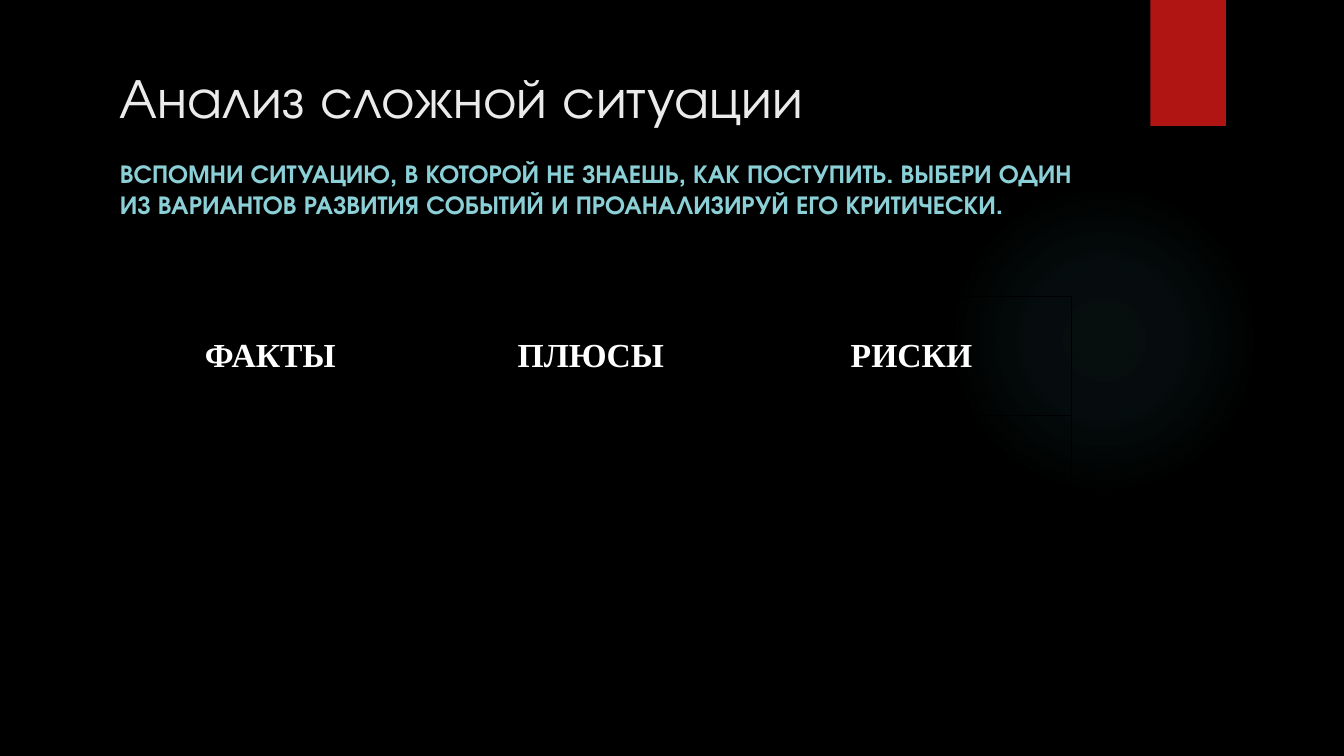
from lxml import etree
from pptx import Presentation
from pptx.dml.color import RGBColor
from pptx.enum.shapes import MSO_SHAPE
from pptx.enum.text import MSO_ANCHOR, PP_ALIGN
from pptx.oxml import parse_xml
from pptx.oxml.ns import nsdecls, qn
from pptx.util import Inches, Pt

RECT, OVAL = MSO_SHAPE.RECTANGLE, MSO_SHAPE.OVAL
TOP, MIDDLE, BOTTOM = MSO_ANCHOR.TOP, MSO_ANCHOR.MIDDLE, MSO_ANCHOR.BOTTOM
LEFT, CENTER = PP_ALIGN.LEFT, PP_ALIGN.CENTER


def rgb(value):
    return RGBColor.from_string(value)


class SlideBuilder:
    SANS = "TeX Gyre Adventor"
    SERIF = "Times New Roman"
    BLACK, WHITE = "000000", "FFFFFF"
    RED, TEAL = "B01513", "50B9C1"
    TITLE, LEAD = "EBEBEB", "8AD0D6"

    def __init__(self, prs):
        self.slide = prs.slides.add_slide(prs.slide_layouts[6])
        fill = self.slide.background.fill
        fill.solid()
        fill.fore_color.rgb = rgb(self.BLACK)

    def shape(self, kind, box, color):
        sp = self.slide.shapes.add_shape(kind, *map(Inches, box))
        sp.shadow.inherit = False
        sp.fill.solid()
        sp.fill.fore_color.rgb = rgb(color)
        sp.line.fill.background()
        return sp

    def glow(self, box, color, stops):
        sp = self.shape(OVAL, box, color)
        grad = parse_xml(
            f'<a:gradFill {nsdecls("a")} rotWithShape="1"><a:gsLst/>'
            '<a:path path="circle"><a:fillToRect l="50000" t="50000" '
            'r="50000" b="50000"/></a:path></a:gradFill>')
        for position, opacity in stops:
            gs = etree.SubElement(grad[0], qn("a:gs"), pos=str(position * 1000))
            clr = etree.SubElement(gs, qn("a:srgbClr"), val=color)
            etree.SubElement(clr, qn("a:alpha"), val=str(opacity * 1000))
        sp_pr = sp.element.spPr
        sp_pr.replace(sp_pr.find(qn("a:solidFill")), grad)

    def run(self, tf, text, size, font, color, bold=False, align=LEFT):
        p = tf.paragraphs[0]
        p.alignment = align
        r = p.add_run()
        r.text = text
        r.font.size = Pt(size)
        r.font.name = font
        r.font.bold = bold
        r.font.color.rgb = rgb(color)

    def text(self, box, text, size, color, bold=False, anchor=TOP):
        tf = self.slide.shapes.add_textbox(*map(Inches, box)).text_frame
        tf.word_wrap = True
        tf.vertical_anchor = anchor
        self.run(tf, text, size, self.SANS, color, bold)

    def border(self, cell, color, width):
        tc_pr = cell._tc.get_or_add_tcPr()
        for i, side in enumerate(("lnL", "lnR", "lnT", "lnB")):
            tc_pr.insert(i, parse_xml(
                f'<a:{side} {nsdecls("a")} w="{Pt(width)}"><a:solidFill>'
                f'<a:srgbClr val="{color}"/></a:solidFill></a:{side}>'))

    def table(self, box, headers, heights):
        table = self.slide.shapes.add_table(
            len(heights), len(headers), *map(Inches, box)).table
        table.first_row = table.horz_banding = False
        for row, height in zip(table.rows, heights):
            row.height = Inches(height)
        for cell in table.iter_cells():
            cell.fill.background()
            cell.margin_left = cell.margin_right = Inches(0.07)
            cell.margin_top = cell.margin_bottom = 0
            cell.vertical_anchor = MIDDLE
            self.border(cell, self.BLACK, 1)
        for col, header in enumerate(headers):
            self.run(table.cell(0, col).text_frame, header, 24,
                     self.SERIF, self.WHITE, True, CENTER)


def main():
    prs = Presentation()
    prs.slide_width, prs.slide_height = Inches(13.33), Inches(7.5)
    s = SlideBuilder(prs)
    s.glow((9.41, 1.83, 3.08, 3.08), s.TEAL, ((0, 7), (36, 6), (69, 0)))
    s.shape(RECT, (11.41, 0, 0.75, 1.25), s.RED)
    s.text((1.09, 0.58, 9.65, 0.76), "Анализ сложной ситуации", 40,
           s.TITLE, anchor=BOTTOM)
    s.text((1.09, 1.51, 9.65, 0.94),
           "ВСПОМНИ СИТУАЦИЮ, В КОТОРОЙ НЕ ЗНАЕШЬ, КАК ПОСТУПИТЬ. "
           "ВЫБЕРИ ОДИН ИЗ ВАРИАНТОВ РАЗВИТИЯ СОБЫТИЙ И "
           "ПРОАНАЛИЗИРУЙ ЕГО КРИТИЧЕСКИ.", 18.5, s.LEAD, bold=True)
    s.table((1.09, 2.94, 9.54, 3.62), ("ФАКТЫ", "ПЛЮСЫ", "РИСКИ"),
            (1.18, 2.44))
    prs.save("out.pptx")


if __name__ == "__main__":
    main()
